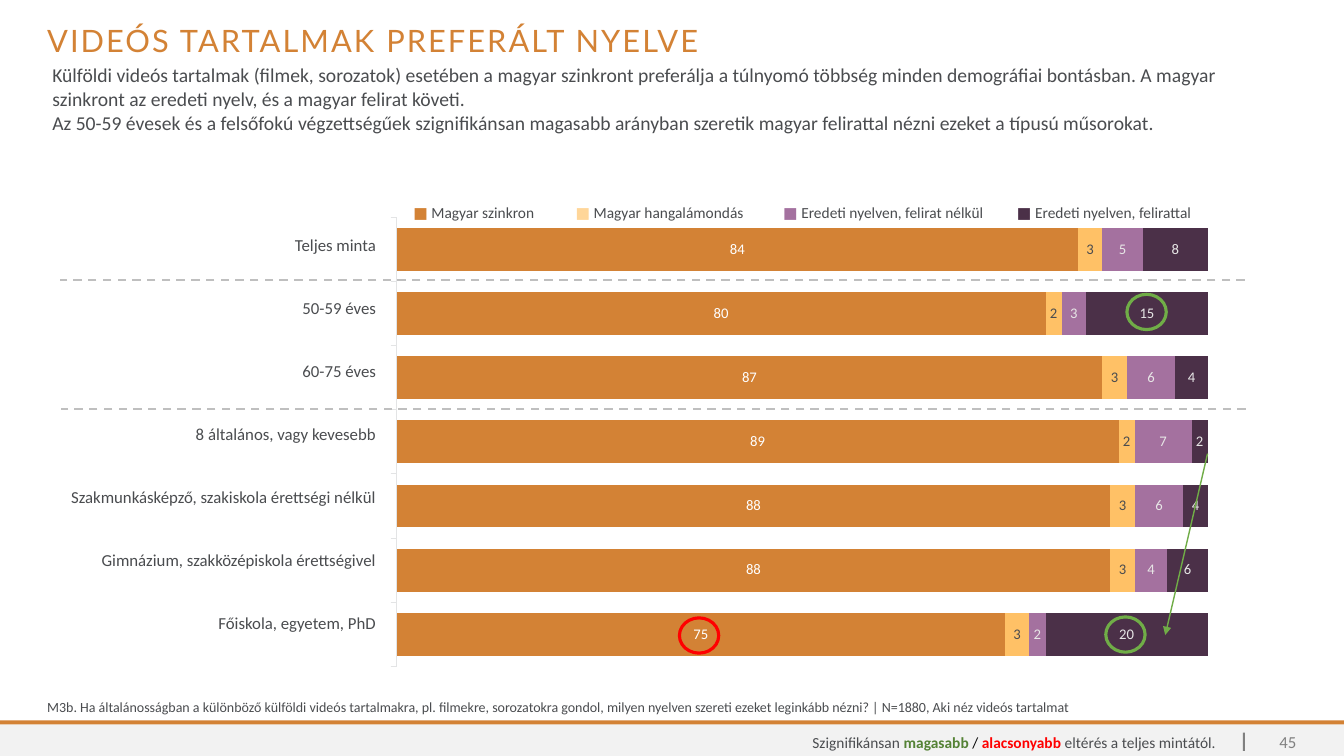
"""Build the slide on preferred languages of video content."""
from dataclasses import dataclass

from lxml import etree
from pptx import Presentation
from pptx.chart.data import CategoryChartData
from pptx.dml.color import RGBColor
from pptx.enum.chart import XL_CHART_TYPE, XL_TICK_LABEL_POSITION, XL_TICK_MARK
from pptx.enum.dml import MSO_LINE
from pptx.enum.shapes import MSO_CONNECTOR, MSO_SHAPE
from pptx.enum.text import MSO_ANCHOR, PP_ALIGN
from pptx.oxml import parse_xml
from pptx.oxml.ns import nsdecls, qn
from pptx.util import Pt

STACKED_BAR = XL_CHART_TYPE.BAR_STACKED
NO_LABELS = XL_TICK_LABEL_POSITION.NONE
TICK_OUT, TICK_NONE = XL_TICK_MARK.OUTSIDE, XL_TICK_MARK.NONE
DASH = MSO_LINE.DASH
STRAIGHT = MSO_CONNECTOR.STRAIGHT
RECTANGLE, OVAL = MSO_SHAPE.RECTANGLE, MSO_SHAPE.OVAL
TOP, MIDDLE = MSO_ANCHOR.TOP, MSO_ANCHOR.MIDDLE
LEFT, RIGHT = PP_ALIGN.LEFT, PP_ALIGN.RIGHT
PLAIN_TABLE = "{2D5ABB26-0587-4C30-8999-92F81FD0307C}"


@dataclass(frozen=True)
class Theme:
    """Colours, fonts and type sizes of the slide."""
    orange: str = "D38235"
    amber: str = "FFC166"
    pale_amber: str = "FFD699"
    mauve: str = "A4719F"
    plum: str = "4B3048"
    text: str = "4A4C4F"
    white: str = "FFFFFF"
    light: str = "E7E6E6"
    axis: str = "E3E4E5"
    band: str = "F2F2F2"
    grey: str = "808080"
    divider: str = "BFBFBF"
    black: str = "000000"
    green: str = "70AD47"
    dark_green: str = "548235"
    red: str = "FF0000"
    heading_font: str = "Lato"
    body_font: str = "Calibri"
    heading: float = 22
    lead: float = 14
    label: float = 12
    legend: float = 11
    value: float = 10.5
    note: float = 10


class SlideBuilder:
    """Draw styled elements on one slide, with lengths in points."""

    def __init__(self, slide, theme):
        self.shapes = slide.shapes
        self.theme = theme

    def style(self, font, size, color, bold=False, name=None):
        font.name = name or self.theme.body_font
        font.size = Pt(size)
        font.bold = bold
        font.color.rgb = RGBColor.from_string(color)

    def add_parts(self, paragraph, parts, size, align=LEFT, name=None):
        paragraph.alignment = align
        for words, color, bold in parts:
            run = paragraph.add_run()
            run.text = words
            self.style(run.font, size, color, bold, name)

    def text(self, box, paragraphs, size, align=LEFT, anchor=TOP, name=None):
        frame = self.shapes.add_textbox(*map(Pt, box)).text_frame
        frame.word_wrap = True
        frame.vertical_anchor = anchor
        for index, parts in enumerate(paragraphs):
            paragraph = frame.add_paragraph() if index else frame.paragraphs[0]
            self.add_parts(paragraph, parts, size, align, name)
        return frame

    def title(self, box, words):
        theme = self.theme
        frame = self.text(box, [[(words, theme.orange, False)]], theme.heading,
                          name=theme.heading_font)
        paragraph = frame.paragraphs[0]
        paragraph.line_spacing = 0.9
        paragraph.runs[0]._r.get_or_add_rPr().set("spc", "150")

    def table(self, box, widths, rows, size, align=LEFT, margins=None):
        frame = self.shapes.add_table(len(rows), len(widths), *map(Pt, box))
        table = frame.table
        table.first_row = table.horz_banding = False
        for style_id in frame.element.iter(qn("a:tableStyleId")):
            style_id.text = PLAIN_TABLE
        for column, width in zip(table.columns, widths):
            column.width = Pt(width)
        for row, entries in zip(table.rows, rows):
            row.height = Pt(box[3] / len(rows))
            for cell, parts in zip(row.cells, entries):
                cell.fill.background()
                cell.vertical_anchor = MIDDLE
                if margins:
                    (cell.margin_left, cell.margin_right,
                     cell.margin_top, cell.margin_bottom) = map(Pt, margins)
                self.add_parts(cell.text_frame.paragraphs[0], parts, size, align)

    def bar(self, box, color):
        shape = self.shapes.add_shape(RECTANGLE, *map(Pt, box))
        shape.shadow.inherit = False
        shape.fill.solid()
        shape.fill.fore_color.rgb = RGBColor.from_string(color)
        shape.line.fill.background()

    def ring(self, left, top, color):
        shape = self.shapes.add_shape(OVAL, Pt(left), Pt(top), Pt(28.08), Pt(25.2))
        shape.shadow.inherit = False
        shape.fill.background()
        shape.line.color.rgb = RGBColor.from_string(color)
        shape.line.width = Pt(2.25)

    def line(self, ends, color, width, dash=None, arrow=False):
        connector = self.shapes.add_connector(STRAIGHT, *map(Pt, ends))
        connector.line.color.rgb = RGBColor.from_string(color)
        connector.line.width = Pt(width)
        if dash:
            connector.line.dash_style = dash
        if arrow:
            etree.SubElement(connector.get_or_add_ln(), qn("a:tailEnd"), type="triangle")
        etree.SubElement(connector.element.spPr, qn("a:effectLst"))

    def chart(self, box, categories, series, layout):
        theme = self.theme
        data = CategoryChartData(number_format="0")
        data.categories = categories
        for name, values, _, _ in series:
            data.add_series(name, values)
        chart = self.shapes.add_chart(STACKED_BAR, *map(Pt, box), data).chart
        chart.has_legend = chart.has_title = False
        self.style(chart.font, theme.value, theme.text)
        plot = chart.plots[0]
        plot.gap_width, plot.overlap = 50, 100
        plot.vary_by_categories = False
        for answer, (_, _, fill, label_color) in zip(plot.series, series):
            answer.format.fill.solid()
            answer.format.fill.fore_color.rgb = RGBColor.from_string(fill)
            labels = answer.data_labels
            labels.show_value = True
            labels.number_format, labels.number_format_is_linked = "0", False
            self.style(labels.font, theme.value, label_color)
        groups = chart.category_axis
        groups.reverse_order = True
        groups.tick_label_position = NO_LABELS
        groups.major_tick_mark, groups.minor_tick_mark = TICK_OUT, TICK_NONE
        groups.format.line.color.rgb = RGBColor.from_string(theme.axis)
        groups.format.line.width = Pt(0.75)
        percent = chart.value_axis
        percent.minimum_scale, percent.maximum_scale, percent.major_unit = 0, 100, 20
        percent.has_major_gridlines = percent.visible = False
        area = chart.element.find(".//" + qn("c:plotArea")) if hasattr(chart, "element") else chart._chartSpace.find(".//" + qn("c:plotArea"))
        for old in area.findall(qn("c:layout")):
            area.remove(old)
        settings = [("layoutTarget", "inner"), ("xMode", "edge"), ("yMode", "edge"),
                    *zip("xywh", layout)]
        inner = "".join(f'<c:{tag} val="{value}"/>' for tag, value in settings)
        area.insert(0, parse_xml(f'<c:layout {nsdecls("c")}><c:manualLayout>{inner}'
                                 "</c:manualLayout></c:layout>"))


def main():
    """Compose the slide and save it."""
    theme = Theme()
    deck = Presentation()
    deck.slide_width, deck.slide_height = Pt(960), Pt(540)
    builder = SlideBuilder(deck.slides.add_slide(deck.slide_layouts[6]), theme)

    groups = ["Teljes minta", "50-59 éves", "60-75 éves", "8 általános, vagy kevesebb",
              "Szakmunkásképző, szakiskola érettségi nélkül",
              "Gimnázium, szakközépiskola érettségivel", "Főiskola, egyetem, PhD"]
    answers = [
        ("Magyar szinkron", (84, 80, 87, 89, 88, 88, 75), theme.orange, theme.white),
        ("Magyar hangalámondás", (3, 2, 3, 2, 3, 3, 3), theme.amber, theme.text),
        ("Eredeti nyelven, felirat nélkül", (5, 3, 6, 7, 6, 4, 2), theme.mauve, theme.light),
        ("Eredeti nyelven, felirattal", (8, 15, 4, 2, 4, 6, 20), theme.plum, theme.light)]
    markers = [theme.orange, theme.pale_amber, theme.mauve, theme.plum]
    findings = [
        "Külföldi videós tartalmak (filmek, sorozatok) esetében a magyar szinkront preferálja a túlnyomó többség minden demográfiai bontásban. A magyar szinkront az eredeti nyelv, és a magyar felirat követi.",
        "Az 50-59 évesek és a felsőfokú végzettségűek szignifikánsan magasabb arányban szeretik magyar felirattal nézni ezeket a típusú műsorokat."]
    question = "M3b. Ha általánosságban a különböző külföldi videós tartalmakra, pl. filmekre, sorozatokra gondol, milyen nyelven szereti ezeket leginkább nézni? | N=1880, Aki néz videós tartalmat"
    significance = [("Szignifikánsan ", theme.text, False), ("magasabb ", theme.dark_green, True),
                    ("/ ", theme.black, False), ("alacsonyabb ", theme.red, True),
                    ("eltérés a teljes mintától.", theme.text, False)]

    builder.bar((0, 517.5, 960, 22.5), theme.band)
    builder.bar((0, 514.6, 960, 2.9), theme.orange)
    builder.bar((887.8, 523.4, 1.4, 13), theme.grey)
    builder.table((27.36, 152.64, 241.92, 315.36), [241.92],
                  [[[(group, theme.text, False)]] for group in groups],
                  theme.label, RIGHT, (0.72, 0.72, 0.72, 0))
    builder.title((26.64, 15.12, 907.2, 33.12), "VIDEÓS TARTALMAK PREFERÁLT NYELVE")
    builder.text((899.28, 523.44, 33.84, 12.96), [[("45", theme.grey, False)]],
                 theme.label, RIGHT, MIDDLE)
    builder.text((30.24, 41.76, 874.8, 55.44),
                 [[(finding, theme.text, False)] for finding in findings], theme.lead)
    builder.chart((269.28, 154.8, 610.56, 323.28), groups, answers, (0.023, 0, 0.949, 0.994))
    builder.table((288, 141.84, 575.28, 20.16), [115.92, 148.32, 167.04, 144],
                  [[[("■ ", marker, False), (answer[0], theme.text, False)]
                    for marker, answer in zip(markers, answers)]], theme.legend)
    builder.text((26.64, 495.36, 907.2, 19.44), [[(question, theme.text, False)]], theme.note)
    for left, height in ((43.2, 200.16), (43.92, 292.32)):
        builder.line((left + 846, height, left, height), theme.divider, 1.5, DASH)
    builder.text((326.88, 523.44, 548.64, 12.96), [significance], theme.legend, RIGHT, MIDDLE)
    builder.ring(804.96, 210.24, theme.green)
    builder.ring(789.84, 440.64, theme.green)
    builder.line((862.56, 324, 832.32, 453.6), theme.green, 1, arrow=True)
    builder.ring(485.28, 441.36, theme.red)
    deck.save("out.pptx")


if __name__ == "__main__":
    main()
